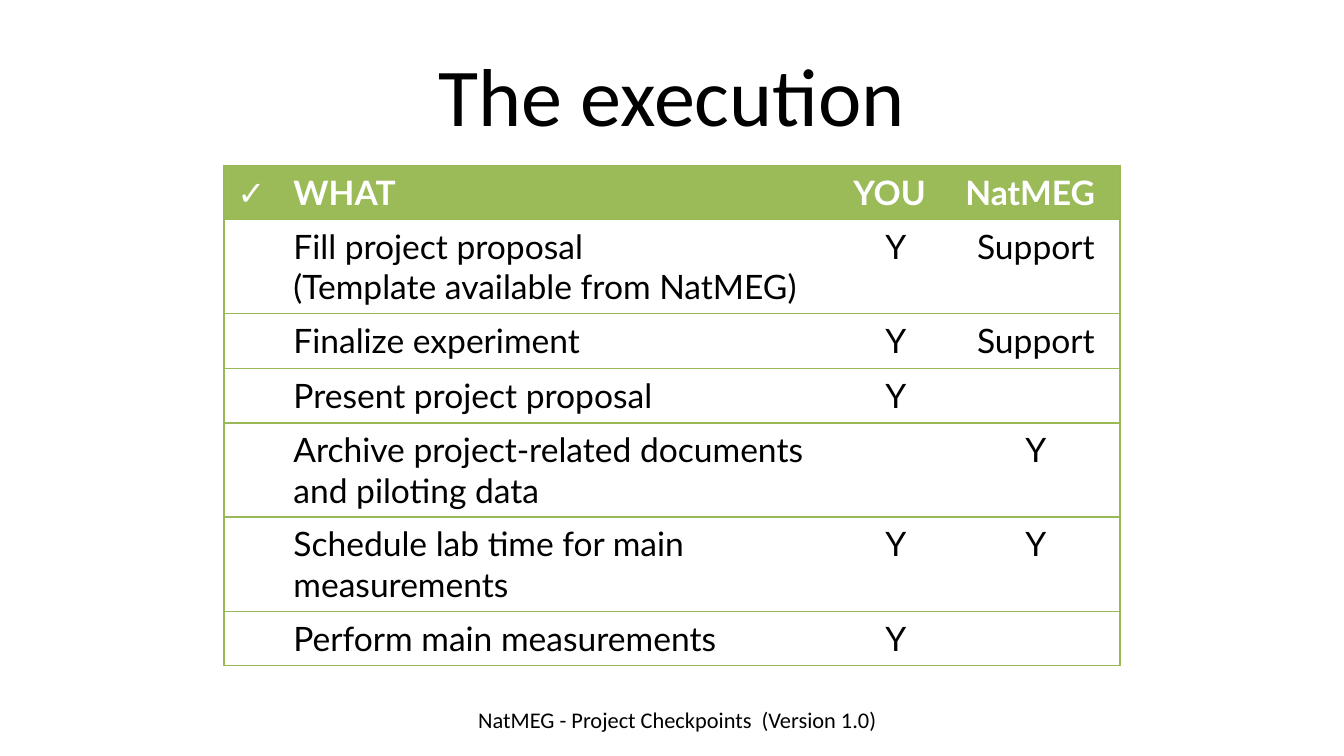
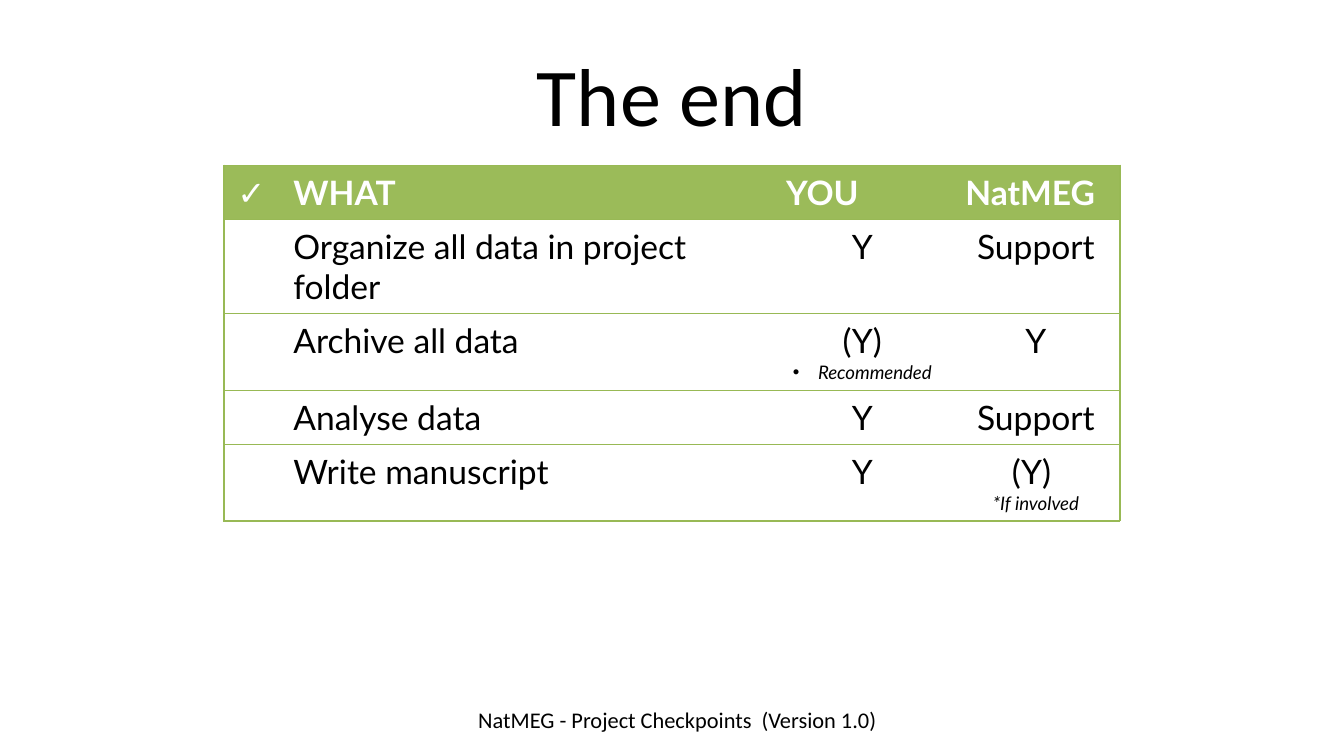
"""Build the two checkpoint table slides."""
from dataclasses import dataclass
from typing import NamedTuple

import lxml.etree
import pptx
import pptx.dml.color
import pptx.enum.text
import pptx.oxml.ns
import pptx.util

PX = 9525
GREEN, EDGE, WHITE, BLACK = "9BBB59", "98B955", "FFFFFF", "000000"
HEAD = ("✓", "WHAT", "YOU", "NatMEG")
FOOT = "NatMEG - Project Checkpoints  (Version 1.0)"
ROW = 39
ALIGN = pptx.enum.text.PP_ALIGN
ANCHOR = pptx.enum.text.MSO_ANCHOR


class Note(NamedTuple):
    """An answer with a small remark under it."""
    text: str
    small: str
    dot: bool = False


@dataclass
class Label:
    """A centred text box with its place in px and size in points."""
    text: str
    box: tuple[int, int, int, int]
    size: int
    anchor: ANCHOR


@dataclass
class Page:
    """A title with a checklist table."""
    title: str
    cols: tuple[int, ...]
    rows: list[tuple[str, str | Note, str | Note]]


PAGES = [
    Page("The execution", (40, 400, 80, 120), [
        ("Fill project proposal\n(Template available from NatMEG)", "Y", "Support"),
        ("Finalize experiment", "Y", "Support"),
        ("Present project proposal", "Y", ""),
        ("Archive project-related documents and piloting data", "", "Y"),
        ("Schedule lab time for main measurements", "Y", "Y"),
        ("Perform main measurements", "Y", ""),
    ]),
    Page("The end", (40, 352, 128, 120), [
        ("Organize all data in project folder", "Y", "Support"),
        ("Archive all data", Note("(Y)", "Recommended", True), "Y"),
        ("Analyse data", "Y", "Support"),
        ("Write manuscript", "Y", Note("(Y) ", "*If involved")),
    ]),
]


def px(num: int) -> pptx.util.Emu:
    """Turn px into EMU."""
    return pptx.util.Emu(num * PX)


def tint(code: str) -> pptx.dml.color.RGBColor:
    """Turn a hex string into a colour."""
    return pptx.dml.color.RGBColor.from_string(code)


def add(node, tag: str, **atts: str):
    """Append a drawing element to a node."""
    return lxml.etree.SubElement(node, pptx.oxml.ns.qn(tag), **atts)


def style(para, face: str, size: int, code: str = BLACK,
          bold: bool = False, slant: bool = False) -> None:
    """Format the runs of a paragraph."""
    for run in para.runs:
        font = run.font
        font.name, font.size = face, pptx.util.Pt(size)
        font.bold, font.italic = bold, slant
        font.color.rgb = tint(code)


def bullet(para) -> None:
    """Give a paragraph a round bullet with a hanging indent."""
    props = para._p.get_or_add_pPr()
    props.set("marL", str(px(18)))
    props.set("indent", str(px(-18)))
    add(props, "a:buFont", typeface="Arial")
    add(props, "a:buChar", char="•")


def border(cell, sides: str) -> None:
    """Draw the named sides of a cell and clear the others."""
    props = cell._tc.get_or_add_tcPr()
    for side in "LRTB":
        line = add(props, f"a:ln{side}", w=str(pptx.util.Pt(0.75)))
        if side in sides:
            add(add(line, "a:solidFill"), "a:srgbClr", val=EDGE)
        else:
            add(line, "a:noFill")


def label(slide, item: Label) -> None:
    """Add a text box."""
    frame = slide.shapes.add_textbox(*map(px, item.box)).text_frame
    frame.word_wrap = True
    frame.vertical_anchor = item.anchor
    frame.text = item.text
    para = frame.paragraphs[0]
    para.alignment = ALIGN.CENTER
    style(para, "Calibri", item.size)


def write(cell, item: str | Note, head: bool, mid: bool) -> None:
    """Put text in a cell and format it."""
    note = isinstance(item, Note)
    frame = cell.text_frame
    frame.text = f"{item.text}\n{item.small}" if note else item
    for num, para in enumerate(frame.paragraphs):
        small = note and num > 0
        if mid:
            para.alignment = ALIGN.CENTER
        if small and item.dot:
            bullet(para)
        style(para, "Lato", 10 if small else 18, WHITE if head else BLACK,
              head and item != HEAD[0], small)


def grid(slide, page: Page) -> None:
    """Add the checklist table."""
    rows = [HEAD] + [("", *row) for row in page.rows]
    table = slide.shapes.add_table(
        len(rows), len(HEAD), px(160), px(118),
        px(sum(page.cols)), px(ROW * len(rows))).table
    table.horz_banding = False
    for col, wide in zip(table.columns, page.cols):
        col.width = px(wide)
    for r, row in enumerate(rows):
        table.rows[r].height = px(ROW)
        for c, item in enumerate(row):
            cell = table.cell(r, c)
            border(cell, "TB" + {0: "L", len(HEAD) - 1: "R"}.get(c, ""))
            if r == 0:
                cell.fill.solid()
                cell.fill.fore_color.rgb = tint(GREEN)
            else:
                cell.fill.background()
            write(cell, item, r == 0, r > 0 and c > 1)


def main() -> None:
    """Build and save the slides."""
    deck = pptx.Presentation()
    deck.slide_width, deck.slide_height = px(960), px(540)
    for page in PAGES:
        slide = deck.slides.add_slide(deck.slide_layouts[6])
        label(slide, Label(FOOT, (320, 500, 328, 29), 12, ANCHOR.TOP))
        label(slide, Label(page.title, (48, 22, 864, 90), 44, ANCHOR.MIDDLE))
        grid(slide, page)
    deck.save("out.pptx")


if __name__ == "__main__":
    main()
